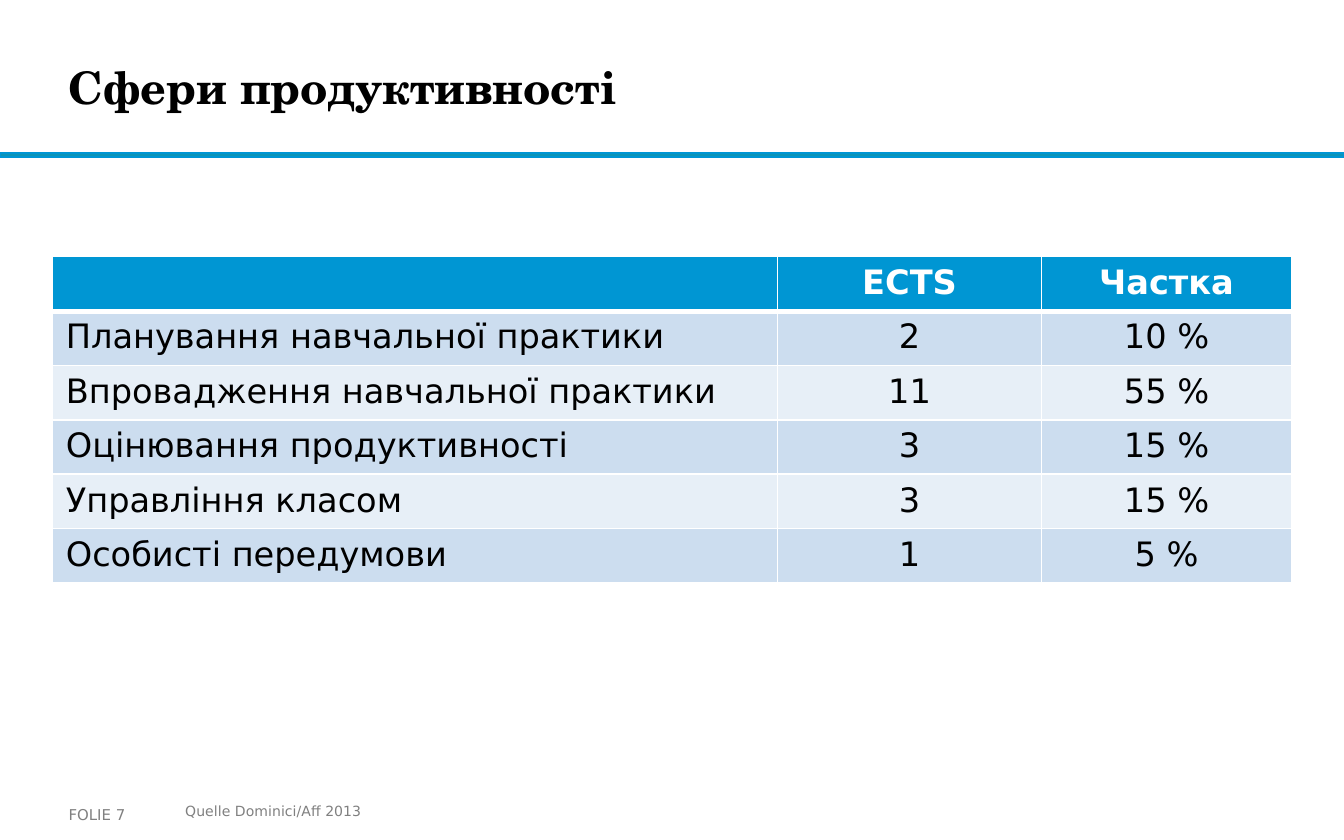
from dataclasses import dataclass, field

from lxml import etree
from pptx import Presentation
from pptx.dml.color import RGBColor
from pptx.enum.shapes import MSO_SHAPE
from pptx.enum.text import MSO_ANCHOR, PP_ALIGN
from pptx.oxml.ns import qn
from pptx.util import Emu, Pt

RECTANGLE = MSO_SHAPE.RECTANGLE
TOP, MIDDLE = MSO_ANCHOR.TOP, MSO_ANCHOR.MIDDLE
LEFT, CENTER = PP_ALIGN.LEFT, PP_ALIGN.CENTER

BLACK = RGBColor(0x00, 0x00, 0x00)
WHITE = RGBColor(0xFF, 0xFF, 0xFF)
GRAY = RGBColor(0x80, 0x80, 0x80)
TEAL = RGBColor(0x0C, 0x94, 0xB7)
BLUE = RGBColor(0x00, 0x96, 0xD3)
BAND_COLORS = (RGBColor(0xCC, 0xDD, 0xEF), RGBColor(0xE7, 0xEF, 0xF7))

SANS = "DejaVu Sans"
SERIF = "TeX Gyre Schola"
EMU_PER_PX = 4572  # 200 px to the inch

COLUMN_WIDTHS = (1079, 393, 372)
ROW_HEIGHT = 81
ROWS = (
    ("", "ECTS", "Частка"),
    ("Планування навчальної практики", "2", "10 %"),
    ("Впровадження навчальної практики", "11", "55 %"),
    ("Оцінювання продуктивності", "3", "15 %"),
    ("Управління класом", "3", "15 %"),
    ("Особисті передумови", "1", "5 %"),
)


@dataclass
class Label:
    text: str
    place: tuple[int, int, int, int]
    font: dict
    color: RGBColor
    anchor: MSO_ANCHOR = MIDDLE
    margins: dict[str, int] = field(default_factory=dict)


LABELS = (
    Label("FOLIE 7", (102, 1184, 196, 56), {"name": SANS, "size": Pt(8)}, GRAY,
          margins={"margin_left": 0, "margin_right": 0}),
    Label("Сфери продуктивності", (102, 30, 1496, 198),
          {"name": SERIF, "size": Pt(24), "bold": True}, BLACK,
          margins={"margin_left": 0, "margin_top": 0,
                   "margin_right": 0, "margin_bottom": 0}),
    Label("Quelle Dominici/Aff 2013", (256, 1184, 1028, 46),
          {"name": SANS, "size": Pt(7.5)}, GRAY, TOP),
)


def px(length: int) -> Emu:
    return Emu(length * EMU_PER_PX)


def set_values(target, values: dict) -> None:
    for name, value in values.items():
        setattr(target, name, value)


def write_text(frame, text: str, font: dict, color: RGBColor, align=LEFT) -> None:
    para = frame.paragraphs[0]
    para.alignment = align
    span = para.add_run()
    span.text = text
    set_values(span.font, font)
    span.font.color.rgb = color


def add_label(page, label: Label) -> None:
    frame = page.shapes.add_textbox(*map(px, label.place)).text_frame
    set_values(frame, {"word_wrap": True, "vertical_anchor": label.anchor})
    set_values(frame, label.margins)
    write_text(frame, label.text, label.font, label.color)


def add_borders(cell, widths: dict[str, int]) -> None:
    properties = cell._tc.get_or_add_tcPr()
    for position, (side, width) in enumerate(widths.items()):
        line = etree.Element(qn(f"a:{side}"), w=str(Pt(width)))
        fill = etree.SubElement(line, qn("a:solidFill"))
        etree.SubElement(fill, qn("a:srgbClr"), val=str(WHITE))
        properties.insert(position, line)


def add_rule(page) -> None:
    rule = page.shapes.add_shape(RECTANGLE, *map(px, (0, 228, 2000, 6)))
    rule.shadow.inherit = False
    rule.fill.solid()
    rule.fill.fore_color.rgb = TEAL
    rule.line.color.rgb = BLUE
    rule.line.width = Pt(1)


def add_share_table(page) -> None:
    place = (78, 382, sum(COLUMN_WIDTHS), ROW_HEIGHT * len(ROWS))
    table = page.shapes.add_table(len(ROWS), len(COLUMN_WIDTHS), *map(px, place)).table
    for column, width in zip(table.columns, COLUMN_WIDTHS):
        column.width = px(width)
    for row_index, texts in enumerate(ROWS):
        table.rows[row_index].height = px(ROW_HEIGHT)
        header = row_index == 0
        fill_color = BLUE if header else BAND_COLORS[(row_index - 1) % 2]
        borders = {"lnL": 1, "lnR": 1, "lnT": 3 if row_index == 1 else 1,
                   "lnB": 3 if header else 1}
        font = {"name": SANS, "size": Pt(18), "bold": header}
        for column_index, text in enumerate(texts):
            cell = table.cell(row_index, column_index)
            cell.fill.solid()
            cell.fill.fore_color.rgb = fill_color
            add_borders(cell, borders)
            if text:
                write_text(cell.text_frame, text, font, WHITE if header else BLACK,
                           CENTER if column_index else LEFT)


def main() -> None:
    deck = Presentation()
    set_values(deck, {"slide_width": px(2000), "slide_height": px(1250)})
    page = deck.slides.add_slide(deck.slide_layouts[6])

    # Rule under the title
    add_rule(page)
    # Title and footer
    for label in LABELS:
        add_label(page, label)
    # Credits and share of each area
    add_share_table(page)

    deck.save("out.pptx")


if __name__ == "__main__":
    main()
